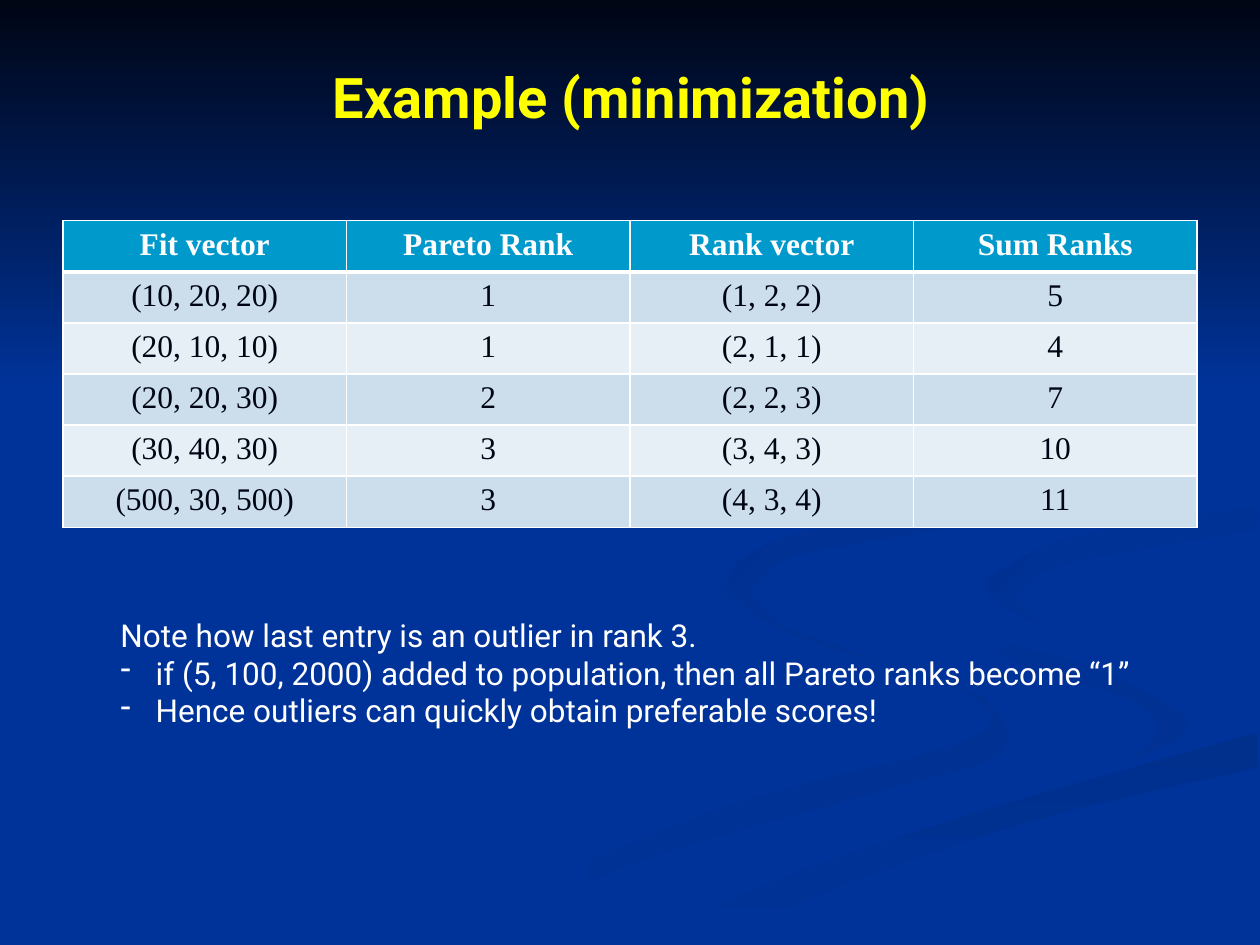
from lxml import etree
from pptx import Presentation
from pptx.dml.color import RGBColor
from pptx.enum.shapes import MSO_SHAPE as Preset
from pptx.enum.text import MSO_ANCHOR as Anchor, PP_ALIGN as Align
from pptx.oxml.ns import qn
from pptx.util import Cm, Pt

NAVY, BLUE, WHITE, YELLOW = "000514", "003399", "FFFFFF", "FFFF00"
HEADER_FILL, BAND_FILLS = "0099CC", ("CCDEEC", "E7EFF6")
SANS, SERIF = "Roboto", "Times New Roman"
HUNDREDTH_INCH = Cm(0.0254)
CURVE_STEPS = 5

TITLE = "Example (minimization)"
RANKING = [
    ("Fit vector", "Pareto Rank", "Rank vector", "Sum Ranks"),
    ("(10, 20, 20)", "1", "(1, 2, 2)", "5"),
    ("(20, 10, 10)", "1", "(2, 1, 1)", "4"),
    ("(20, 20, 30)", "2", "(2, 2, 3)", "7"),
    ("(30, 40, 30)", "3", "(3, 4, 3)", "10"),
    ("(500, 30, 500)", "3", "(4, 3, 4)", "11"),
]
REMARK = "Note how last entry is an outlier in rank 3."
CONSEQUENCES = [
    "if (5, 100, 2000) added to population, then all Pareto ranks become “1”",
    "Hence outliers can quickly obtain preferable scores!",
]

RIBBONS = [
    (BLUE, "003193", 0, [
        [(781, 553), (682, 519), (594, 485), (575, 459)],
        [(570, 472), (631, 505), (728, 535), (786, 566), (749, 594), (579, 639), (300, 749)],
        [(361, 749), (499, 687), (676, 634), (780, 605), (800, 581), (781, 553)]]),
    (BLUE, "003193", 45, [
        [(943, 570), (870, 530), (758, 498), (724, 464)],
        [(730, 484), (815, 530), (900, 557), (917, 582), (894, 605)],
        [(937, 586), (943, 570)]]),
    ("002F8C", BLUE, 90, [
        [(503, 749), (630, 693), (797, 638), (998, 581)],
        [(998, 609), (821, 651), (670, 702), (571, 749)]]),
    (BLUE, BLUE, 0, [
        [(725, 464), (758, 498), (889, 535), (943, 570), (902, 603), (704, 655), (477, 749)],
        [(503, 749), (630, 693), (797, 638), (999, 581)],
        [(999, 538), (848, 503), (782, 460), (850, 427), (999, 402)],
        [(999, 387), (808, 417), (725, 464)]]),
    ("003091", BLUE, 45, [
        [(781, 460), (791, 478), (826, 496)],
        [(805, 474), (843, 448), (998, 420)],
        [(998, 402), (849, 427), (781, 460)]]),
    ("002F8E", BLUE, 45, [
        [(683, 430), (825, 402), (892, 354), (864, 291), (762, 233)],
        [(846, 279), (889, 335), (842, 378), (637, 422), (577, 462), (622, 500)],
        [(593, 470), (624, 444), (683, 430)]]),
]


def rgb(code):
    return RGBColor.from_string(code)


def smooth(edge):
    padded = [edge[0], *edge, edge[-1]]
    curve = []
    for before, start, end, after in zip(padded, padded[1:], padded[2:], padded[3:]):
        for step in range(CURVE_STEPS):
            t = step / CURVE_STEPS
            curve.append(tuple(
                b + t * (c - a + t * (2 * a - 5 * b + 4 * c - d + t * (3 * b - a - 3 * c + d))) / 2
                for a, b, c, d in zip(before, start, end, after)))
    return curve + [edge[-1]]


def paint(shape, start, end, clockwise):
    shape.shadow.inherit = False
    shape.line.fill.background()
    if start == end:
        shape.fill.solid()
        shape.fill.fore_color.rgb = rgb(start)
        return
    shape.fill.gradient()
    shape.fill.gradient_angle = (360 - clockwise) % 360
    for stop, code in zip(shape.fill.gradient_stops, (start, end)):
        stop.color.rgb = rgb(code)


def add_ribbon(slide, start, end, clockwise, edges):
    points = [point for edge in edges for point in smooth(edge)]
    pen = slide.shapes.build_freeform(*points[0], scale=HUNDREDTH_INCH)
    pen.add_line_segments(points[1:], close=True)
    paint(pen.convert_to_shape(), start, end, clockwise)


def write(paragraph, text, *, font, size=18, color=WHITE, bold=False, align=Align.LEFT, bullet=None):
    paragraph.alignment = align
    run = paragraph.add_run()
    run.text = text
    run.font.name, run.font.size, run.font.bold = font, Pt(size), bold
    run.font.color.rgb = rgb(color)
    if bullet:
        properties = paragraph._p.get_or_add_pPr()
        properties.set("marL", str(Cm(0.71)))
        properties.set("indent", str(-Cm(0.71)))
        etree.SubElement(properties, qn("a:buChar")).set("char", bullet)


def add_frame(slide, left, top, width, height, anchor=Anchor.TOP):
    frame = slide.shapes.add_textbox(Cm(left), Cm(top), Cm(width), Cm(height)).text_frame
    frame.word_wrap = True
    frame.vertical_anchor = anchor
    return frame


def set_borders(cell, bottom):
    properties = cell._tc.get_or_add_tcPr()
    sides = (("a:lnL", 1), ("a:lnR", 1), ("a:lnT", 1), ("a:lnB", bottom))
    for position, (side, width) in enumerate(sides):
        border = etree.Element(qn(side), w=str(Pt(width)))
        fill = etree.SubElement(border, qn("a:solidFill"))
        etree.SubElement(fill, qn("a:srgbClr")).set("val", WHITE)
        properties.insert(position, border)


def add_ranking(slide):
    rows, columns = len(RANKING), len(RANKING[0])
    table = slide.shapes.add_table(
        rows, columns, Cm(1.27), Cm(4.45), Cm(22.86), Cm(1.03 * rows)).table
    for r, entries in enumerate(RANKING):
        header = r == 0
        for c, entry in enumerate(entries):
            cell = table.cell(r, c)
            cell.fill.solid()
            cell.fill.fore_color.rgb = rgb(HEADER_FILL if header else BAND_FILLS[(r - 1) % 2])
            set_borders(cell, bottom=3 if header else 1)
            write(cell.text_frame.paragraphs[0], entry, font=SERIF, bold=header,
                  color=WHITE if header else NAVY, align=Align.CENTER)


def main():
    deck = Presentation()
    deck.slide_width, deck.slide_height = Cm(25.4), Cm(19.05)
    slide = deck.slides.add_slide(deck.slide_layouts[6])
    slide.background.fill.solid()
    slide.background.fill.fore_color.rgb = rgb(BLUE)
    for ribbon in RIBBONS:
        add_ribbon(slide, *ribbon)
    night = slide.shapes.add_shape(Preset.RECTANGLE, 0, 0, deck.slide_width, Cm(7.82))
    paint(night, NAVY, BLUE, 90)

    title = add_frame(slide, 1.3, 0.53, 22.86, 2.8, Anchor.MIDDLE)
    write(title.paragraphs[0], TITLE, font=SANS, size=32, color=YELLOW, bold=True,
          align=Align.CENTER)
    add_ranking(slide)
    notes = add_frame(slide, 2.18, 12.29, 21.2, 2.57)
    write(notes.paragraphs[0], REMARK, font=SANS)
    for consequence in CONSEQUENCES:
        write(notes.add_paragraph(), consequence, font=SANS, bullet="-")
    deck.save("out.pptx")


if __name__ == "__main__":
    main()
